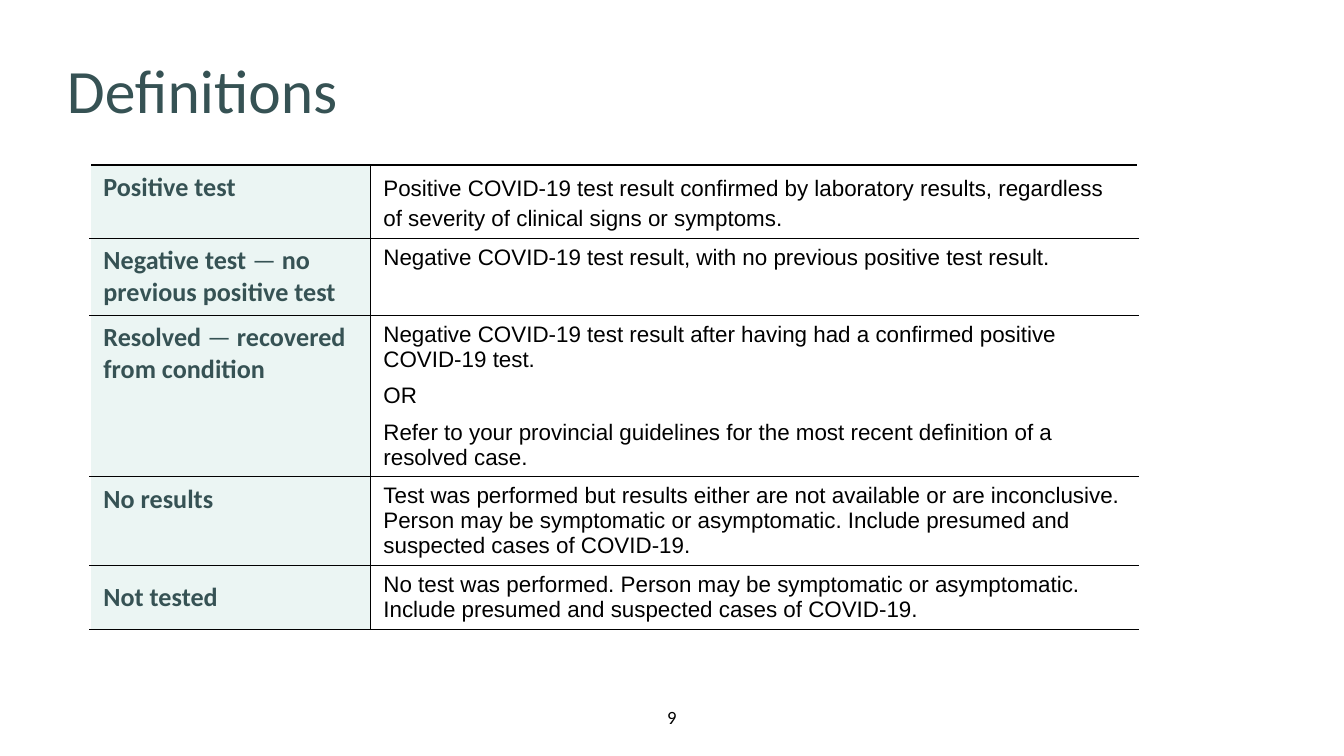
from lxml import etree
from pptx import Presentation
from pptx.dml.color import RGBColor
from pptx.enum.text import MSO_ANCHOR, PP_ALIGN
from pptx.oxml.ns import qn
from pptx.util import Emu, Pt

LEFT, CENTER = PP_ALIGN.LEFT, PP_ALIGN.CENTER
TOP, MIDDLE = MSO_ANCHOR.TOP, MSO_ANCHOR.MIDDLE
TITLE_ONLY = 5
EMU_PER_PX = 914400 / 134.4
COLORS = {"teal": "365254", "mint": "EBF5F3", "black": "000000", "white": "FFFFFF"}

COLUMN_WIDTHS = [280, 768]
ROW_HEIGHTS = [73, 77, 161, 89, 64]
DEFINITIONS = [
    ("Positive test",
     ["Positive COVID-19 test result confirmed by laboratory results, regardless "
      "of severity of clinical signs or symptoms."]),
    ("Negative test — no previous positive test",
     ["Negative COVID-19 test result, with no previous positive test result."]),
    ("Resolved — recovered from condition",
     ["Negative COVID-19 test result after having had a confirmed positive COVID-19 test.",
      "OR",
      "Refer to your provincial guidelines for the most recent definition of a resolved case."]),
    ("No results",
     ["Test was performed but results either are not available or are inconclusive. "
      "Person may be symptomatic or asymptomatic. Include presumed and suspected "
      "cases of COVID-19."]),
    ("Not tested",
     ["No test was performed. Person may be symptomatic or asymptomatic. "
      "Include presumed and suspected cases of COVID-19."]),
]


def px(n):
    return Emu(round(n * EMU_PER_PX))


def place(s, left, top, width, height):
    s.left, s.top, s.width, s.height = px(left), px(top), px(width), px(height)


def style_run(r, font, size, color, bold=False):
    r.font.name, r.font.size, r.font.bold = font, Pt(size), bold
    r.font.color.rgb = RGBColor.from_string(COLORS[color])


def set_frame(tf, anchor):
    tf.margin_left = tf.margin_top = tf.margin_right = tf.margin_bottom = 0
    tf.word_wrap = True
    tf.vertical_anchor = anchor


def add_title(slide, text):
    s = slide.shapes.title
    place(s, 67, 64, 1210, 63)
    set_frame(s.text_frame, TOP)
    s.text_frame.text = text
    p = s.text_frame.paragraphs[0]
    p.alignment, p.line_spacing = LEFT, Pt(33)
    style_run(p.runs[0], "Calibri", 33, "teal")


def add_page_number(slide, number):
    s = slide.shapes.add_textbox(px(630), px(706), px(84), px(23))
    set_frame(s.text_frame, MIDDLE)
    s.text_frame.text = str(number)
    p = s.text_frame.paragraphs[0]
    p.alignment = CENTER
    style_run(p.runs[0], "Calibri", 10, "black")


def set_borders(cell, **sides):
    """Draw each side (L, R, T, B) from a (colour, points) pair."""
    tc_pr = cell._tc.get_or_add_tcPr()
    for i, side in enumerate("LRTB"):
        color, width = sides[side]
        ln = etree.Element(qn(f"a:ln{side}"), w=str(Pt(width)))
        fill = etree.SubElement(ln, qn("a:solidFill"))
        etree.SubElement(fill, qn("a:srgbClr"), val=COLORS[color])
        tc_pr.insert(i, ln)


def fill_label(cell, label):
    """Write the term in bold, with any dash in regular weight."""
    cell.fill.solid()
    cell.fill.fore_color.rgb = RGBColor.from_string(COLORS["mint"])
    p = cell.text_frame.paragraphs[0]
    before, dash, after = label.partition("— ")
    for text, bold in ((before, True), (dash, False), (after, True)):
        if text:
            r = p.add_run()
            r.text = text
            style_run(r, "Calibri", 14, "teal", bold)


def fill_definition(cell, paragraphs):
    cell.fill.background()
    tf = cell.text_frame
    tf.text = "\n".join(paragraphs)
    for p in tf.paragraphs:
        style_run(p.runs[0], "Arial", 12, "black")
    for p in tf.paragraphs[:-1]:
        p.space_after = Pt(6)


def add_definitions_table(slide):
    frame = slide.shapes.add_table(
        len(DEFINITIONS), len(COLUMN_WIDTHS), px(90), px(165),
        px(sum(COLUMN_WIDTHS)), px(sum(ROW_HEIGHTS)))
    table = frame.table
    table.first_row = table.horz_banding = False
    for column, width in zip(table.columns, COLUMN_WIDTHS):
        column.width = px(width)
    for row, height in zip(table.rows, ROW_HEIGHTS):
        row.height = px(height)

    thin, thick, edge = ("black", 0.5), ("black", 1), ("white", 1)
    last = len(DEFINITIONS) - 1
    for i, (label, paragraphs) in enumerate(DEFINITIONS):
        term, definition = table.cell(i, 0), table.cell(i, 1)
        fill_label(term, label)
        fill_definition(definition, paragraphs)
        top = thick if i == 0 else thin
        bottom = thick if i == last else thin
        set_borders(term, L=edge, R=thin, T=top, B=bottom)
        set_borders(definition, L=thin, R=edge, T=top, B=bottom)
    table.cell(0, 1).text_frame.paragraphs[0].line_spacing = Pt(16)
    table.cell(last, 0).vertical_anchor = MIDDLE


def main():
    prs = Presentation()
    prs.slide_width, prs.slide_height = px(1344), px(756)
    slide = prs.slides.add_slide(prs.slide_layouts[TITLE_ONLY])
    add_title(slide, "Definitions")
    add_definitions_table(slide)
    add_page_number(slide, 9)
    prs.save("out.pptx")


if __name__ == "__main__":
    main()
